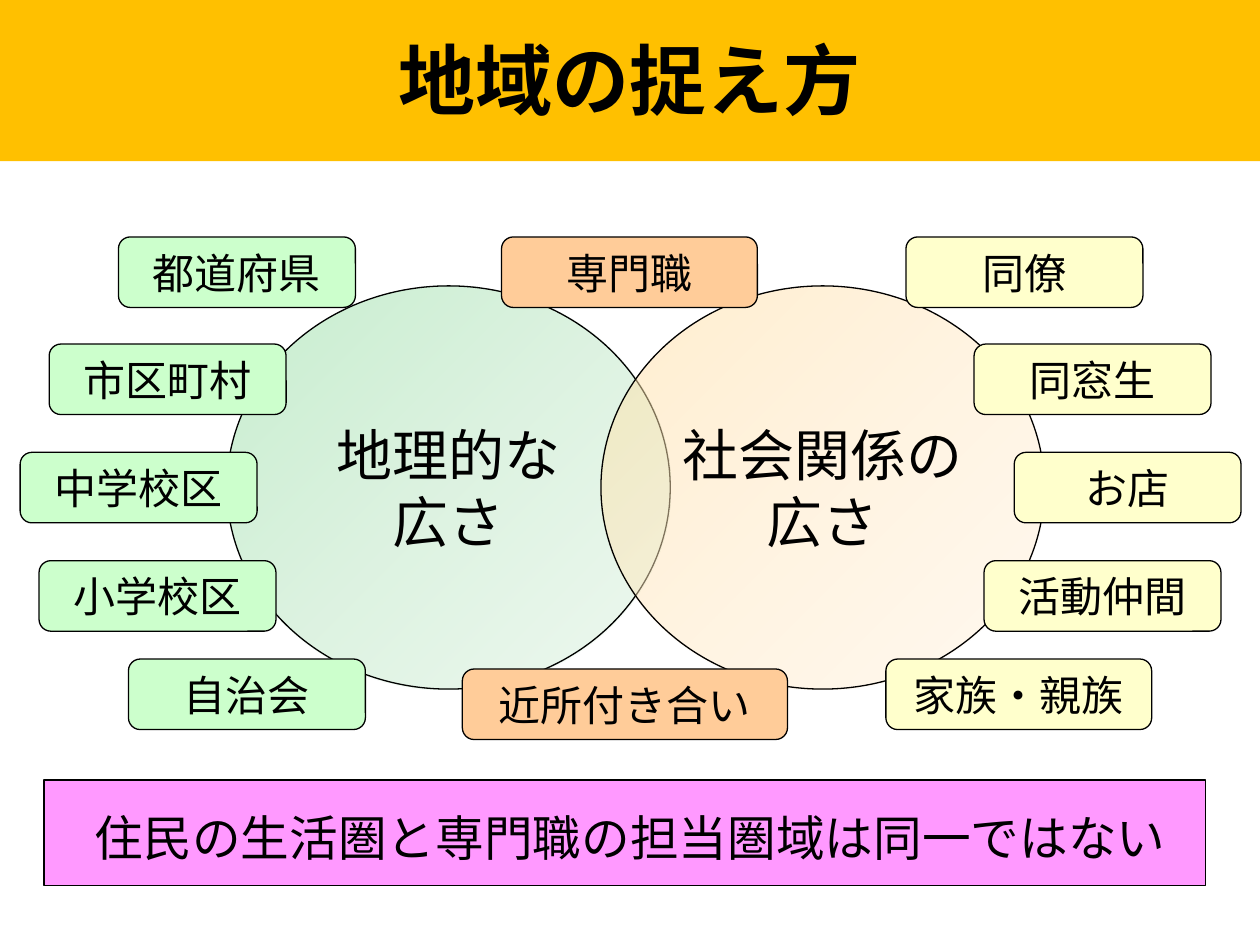
from dataclasses import dataclass

from lxml import etree
from pptx import Presentation
from pptx.dml.color import RGBColor
from pptx.enum.shapes import MSO_SHAPE as Shape
from pptx.enum.text import MSO_ANCHOR as Anchor, MSO_AUTO_SIZE as AutoSize, PP_ALIGN as Align
from pptx.oxml.ns import qn
from pptx.util import Pt


@dataclass(frozen=True)
class Theme:
    ink: str = "000000"
    title_band: str = "FFC000"
    message_fill: str = "FF99FF"
    place: str = "CCFFCC"
    relation: str = "FFFFCC"
    shared: str = "FFCC99"
    place_gradient: tuple = ("91DEA0", "BDE8C5", "DFF3E3")
    relation_gradient: tuple = ("FFDFA0", "FFEAC5", "FFF4E3")
    main_font: str = "Calibri"
    tag_font: str = "Times New Roman"
    message_font: str = "Arial"
    title_size: float = 44
    circle_size: float = 32
    tag_size: float = 24
    message_size: float = 27.8
    outline: float = 0.75


THEME = Theme()

# Content: all positions and sizes in points
TITLE = "地域の捉え方"
MESSAGE = "住民の生活圏と専門職の担当圏域は同一ではない"
CIRCLES = [
    ("地理的な\n広さ", 129.6, THEME.place_gradient),
    ("社会関係の広さ", 343.4, THEME.relation_gradient),
]
CIRCLE_TOP, CIRCLE_WIDTH, CIRCLE_HEIGHT = 163.4, 253.4, 230.4

ROW_TOPS = [135.4, 196.6, 258.5, 320.4, 376.6]
TAG_WIDTH, TAG_HEIGHT = 135.4, 40.3
# Each side runs from the top row down: text, left, width
PLACES = [
    ("都道府県", 67.7, TAG_WIDTH),
    ("市区町村", 28.1, TAG_WIDTH),
    ("中学校区", 11.5, TAG_WIDTH),
    ("小学校区", 22.3, TAG_WIDTH),
    ("自治会", 73.4, TAG_WIDTH),
]
RELATIONS = [
    ("同僚", 517.7, TAG_WIDTH),
    ("同窓生", 556.6, TAG_WIDTH),
    ("お店", 579.6, 129.6),
    ("活動仲間", 562.3, TAG_WIDTH),
    ("家族・親族", 506.2, 151.9),
]
SHARED = [("専門職", 286.6, 146.2), ("近所付き合い", 264.2, 185.8)]
SHARED_TOPS = [ROW_TOPS[0], 382.3]


def write(shape, text, font_name, size, align=Align.CENTER, bold=False):
    frame = shape.text_frame
    frame.word_wrap = True
    frame.auto_size = AutoSize.NONE
    frame.vertical_anchor = Anchor.MIDDLE
    paragraph = frame.paragraphs[0]
    paragraph.text = text
    paragraph.alignment = align
    for run in paragraph.runs:
        run.font.name = font_name
        run.font.size = Pt(size)
        run.font.bold = bold
        run.font.color.rgb = RGBColor.from_string(THEME.ink)
    return paragraph


def fill_solid(shape, color):
    shape.fill.solid()
    shape.fill.fore_color.rgb = RGBColor.from_string(color)


def fill_gradient(shape, colors):
    """Even stops, half transparent, running to the lower right."""
    gradient = etree.Element(qn("a:gradFill"), rotWithShape="1")
    stops = etree.SubElement(gradient, qn("a:gsLst"))
    for index, color in enumerate(colors):
        position = 100000 * index // (len(colors) - 1)
        stop = etree.SubElement(stops, qn("a:gs"), pos=str(position))
        rgb = etree.SubElement(stop, qn("a:srgbClr"), val=color)
        etree.SubElement(rgb, qn("a:alpha"), val="50000")
    etree.SubElement(gradient, qn("a:lin"), ang="2700000", scaled="1")
    shape._element.spPr.find(qn("a:prstGeom")).addnext(gradient)


def add_outlined(slide, kind, left, top, width, height):
    shape = slide.shapes.add_shape(kind, Pt(left), Pt(top), Pt(width), Pt(height))
    shape.shadow.inherit = False
    shape.line.color.rgb = RGBColor.from_string(THEME.ink)
    shape.line.width = Pt(THEME.outline)
    return shape


def add_tags(slide, tags, tops, color):
    for (text, left, width), top in zip(tags, tops):
        tag = add_outlined(slide, Shape.ROUNDED_RECTANGLE, left, top, width, TAG_HEIGHT)
        fill_solid(tag, color)
        write(tag, text, THEME.tag_font, THEME.tag_size)


def main():
    presentation = Presentation()
    presentation.slide_width, presentation.slide_height = Pt(720), Pt(540)
    slide = presentation.slides.add_slide(presentation.slide_layouts[5])

    # Title band
    title = slide.shapes.title
    title.left, title.top, title.width, title.height = Pt(0), Pt(-2.2), Pt(720), Pt(94.3)
    fill_solid(title, THEME.title_band)
    write(title, TITLE, THEME.main_font, THEME.title_size, bold=True)

    # Overlapping circles
    for text, left, colors in CIRCLES:
        circle = add_outlined(slide, Shape.OVAL, left, CIRCLE_TOP, CIRCLE_WIDTH, CIRCLE_HEIGHT)
        fill_gradient(circle, colors)
        write(circle, text, THEME.main_font, THEME.circle_size)

    # Tags around the circles
    add_tags(slide, PLACES, ROW_TOPS, THEME.place)
    add_tags(slide, RELATIONS, ROW_TOPS, THEME.relation)
    add_tags(slide, SHARED, SHARED_TOPS, THEME.shared)

    # Closing message
    message = add_outlined(slide, Shape.RECTANGLE, 25.2, 445.7, 663.8, 60.5)
    fill_solid(message, THEME.message_fill)
    message.text_frame.margin_left = Pt(29)
    message.text_frame.margin_top = Pt(8)
    paragraph = write(message, MESSAGE, THEME.message_font, THEME.message_size, Align.LEFT)
    paragraph.space_before = Pt(6)

    presentation.save("out.pptx")


if __name__ == "__main__":
    main()
